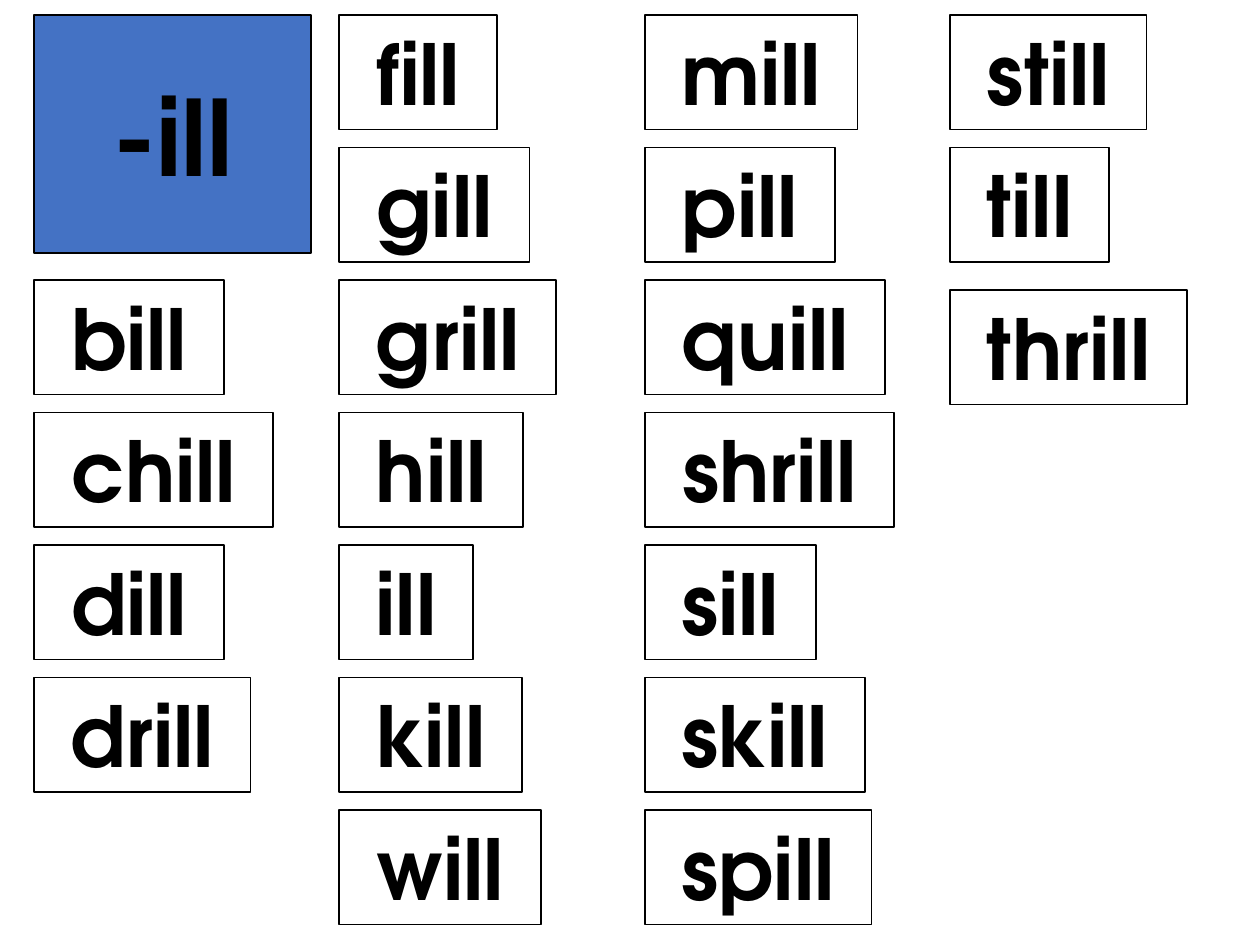
from pptx import Presentation
from pptx.dml.color import RGBColor
from pptx.enum import shapes, text
from pptx.util import Pt

BLACK = RGBColor(0, 0, 0)
WHITE = RGBColor(255, 255, 255)
BLUE = RGBColor(0x44, 0x72, 0xC4)
FONT = "TeX Gyre Adventor"
LEFT, TOP = 19.4, 8.6
COL, ROW = 174.5, 75.7
HIGH = 65.5

WORDS = [
    (2, [("bill", 108.7), ("chill", 136.8), ("dill", 108.7), ("drill", 123.8)]),
    (0, [("fill", 90), ("gill", 108.7), ("grill", 123.8), ("hill", 105.1),
         ("ill", 76.3), ("kill", 104.4), ("will", 115.2)]),
    (0, [("mill", 121.7), ("pill", 108.7), ("quill", 137.5), ("shrill", 142.6),
         ("sill", 97.9), ("skill", 126), ("spill", 129.6)]),
    (0, [("still", 112.3), ("till", 90.7), ("thrill", 135.4)]),
]
DROP = {"thrill": 5.7}


def style(box, label, size, fill, anchor, wrap):
    """Give a box its fill, outline and centred bold text."""
    box.fill.solid()
    box.fill.fore_color.rgb = fill
    box.line.color.rgb = BLACK
    box.line.width = Pt(1)
    frame = box.text_frame
    frame.text = label
    frame.auto_size = text.MSO_AUTO_SIZE.NONE
    frame.word_wrap = wrap
    frame.vertical_anchor = anchor
    line = frame.paragraphs[0]
    line.alignment = text.PP_ALIGN.CENTER
    font = line.runs[0].font
    font.name, font.size, font.bold = FONT, Pt(size), True
    font.color.rgb = BLACK


def head(slide, label):
    """Place the word ending in the title."""
    box = slide.shapes.title
    box.left, box.top = Pt(LEFT), Pt(TOP)
    box.width, box.height = Pt(158.4), Pt(136.1)
    style(box, label, 60, BLUE, text.MSO_ANCHOR.MIDDLE, True)


def card(slide, word, left, top, width):
    """Add one word card."""
    box = slide.shapes.add_shape(
        shapes.MSO_SHAPE.RECTANGLE, Pt(left), Pt(top), Pt(width), Pt(HIGH))
    box.shadow.inherit = False
    style(box, word, 48, WHITE, text.MSO_ANCHOR.TOP, False)


def main():
    """Build the slide of word cards."""
    deck = Presentation()
    deck.slide_width, deck.slide_height = Pt(720), Pt(540)
    slide = deck.slides.add_slide(deck.slide_layouts[5])
    head(slide, "-ill")
    for col, (start, words) in enumerate(WORDS):
        for row, (word, width) in enumerate(words, start):
            top = TOP + row * ROW + DROP.get(word, 0)
            card(slide, word, LEFT + col * COL, top, width)
    deck.save("out.pptx")


if __name__ == "__main__":
    main()
